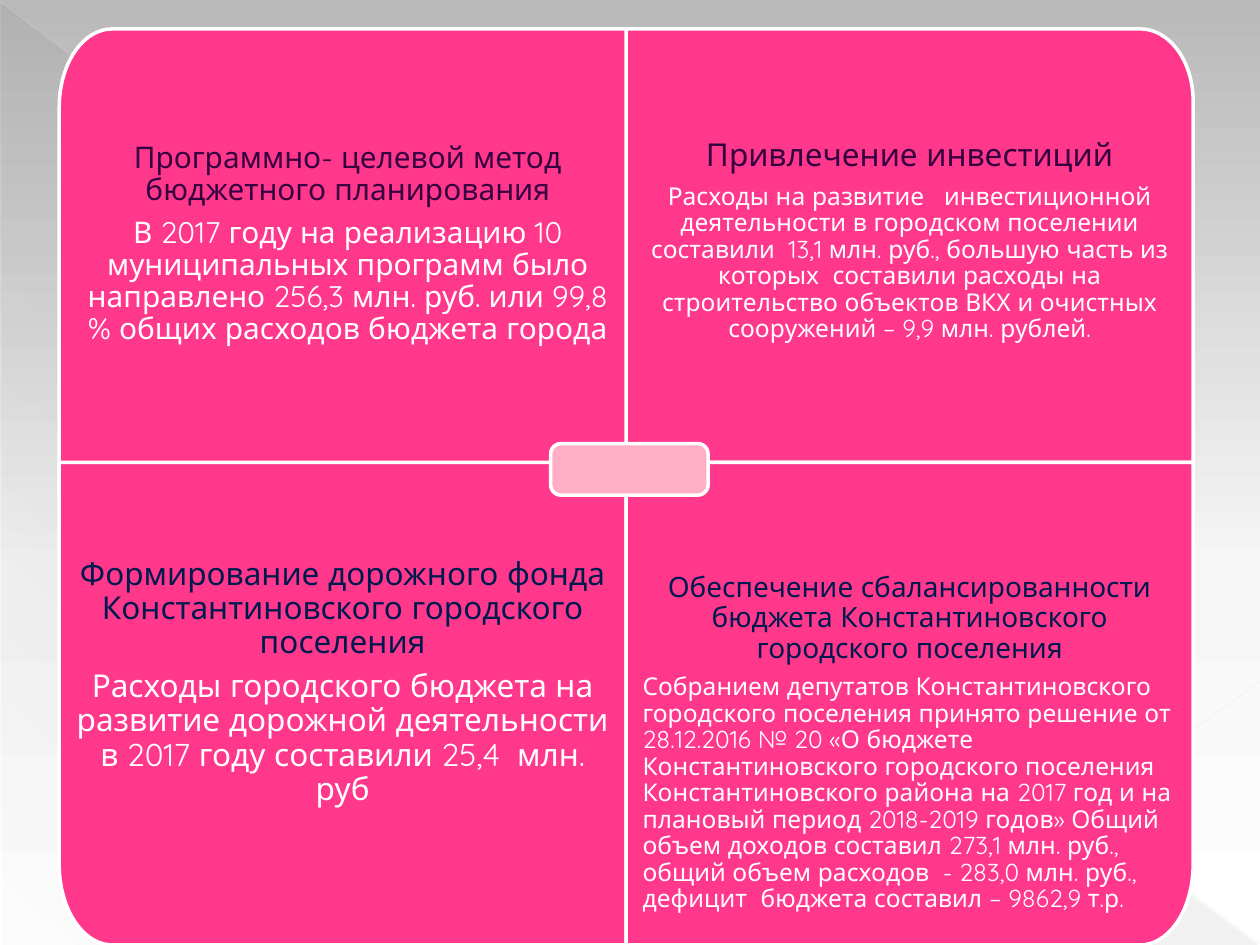
from math import cos, pi, sin

from lxml import etree
from pptx import Presentation
from pptx.dml.color import RGBColor
from pptx.enum.shapes import MSO_CONNECTOR, MSO_SHAPE
from pptx.enum.text import MSO_ANCHOR, PP_ALIGN
from pptx.oxml import parse_xml
from pptx.oxml.ns import nsdecls, qn
from pptx.util import Inches, Pt

CENTER, LEFT = PP_ALIGN.CENTER, PP_ALIGN.LEFT
TOP, MIDDLE = MSO_ANCHOR.TOP, MSO_ANCHOR.MIDDLE

# Theme
THEME = dict(font="Quicksand", panel="FF388C", badge="FFAFC5", white="FFFFFF",
             plum="340040", navy="001A4F", border=2, spacing=0.9, after=6)
BACKGROUND = [(0, "B9B9B9", 100), (60, "F6F6F6", 100), (100, "FFFFFF", 100)]
SHADE = [(0, "666666", 10), (70, "666666", 8), (100, "666666", 1)]
DECOR_LINES = [  # start, end, colour, width, opacity
    ((0, 0.01), (9.99, 7.49), "E8E8E8", 0.39, 35),
    ((10, 5.41), (7.07, 7.49), "EAEAEA", 0.47, 45),
]

# Content: outer and inner corner, top and bottom inset, heading and body
LEFT_X, MID_X, RIGHT_X = 0.47, 4.97, 9.47
TOP_Y, MID_Y, BOTTOM_Y = 0.23, 3.67, 7.5
RADIUS_X, RADIUS_SHARE = 0.42, 1 / 6
PANELS = [
    dict(outer=(LEFT_X, TOP_Y), inner=(5.05, 3.94), insets=(0.47, 0.76),
         anchor=MIDDLE, color="plum", sizes=(17, 17), align=CENTER,
         head="Программно- целевой метод бюджетного планирования",
         body="В 2017 году на реализацию 10 муниципальных программ было "
              "направлено 256,3 млн. руб. или 99,8 % общих расходов бюджета города"),
    dict(outer=(RIGHT_X, TOP_Y), inner=(MID_X, MID_Y), insets=(0.69, 0.76),
         anchor=MIDDLE, color="plum", sizes=(18, 14), align=CENTER,
         head="Привлечение инвестиций",
         body="Расходы на развитие   инвестиционной деятельности в городском "
              "поселении составили  13,1 млн. руб., большую часть из которых  "
              "составили расходы на строительство объектов ВКХ и очистных "
              "сооружений – 9,9 млн. рублей."),
    dict(outer=(LEFT_X, BOTTOM_Y), inner=(MID_X, MID_Y), insets=(0.76, 0.13),
         anchor=TOP, color="navy", sizes=(18, 18), align=CENTER,
         head="Формирование дорожного фонда Константиновского городского поселения",
         body="Расходы городского бюджета на развитие дорожной деятельности "
              "в 2017 году составили 25,4  млн. руб"),
    dict(outer=(RIGHT_X, BOTTOM_Y), inner=(MID_X, MID_Y), insets=(0.76, 0.13),
         anchor=MIDDLE, color="navy", sizes=(16, 14), align=LEFT,
         head="Обеспечение сбалансированности бюджета Константиновского "
              "городского поселения",
         body="Собранием депутатов Константиновского городского поселения принято "
              "решение от 28.12.2016 № 20 «О бюджете Константиновского городского "
              "поселения Константиновского района на 2017 год и на плановый период "
              "2018-2019 годов» Общий объем доходов составил 273,1 млн. руб., общий "
              "объем расходов  - 283,0 млн. руб., дефицит  бюджета составил – "
              "9862,9 т.р."),
]


def rgb(name):
    return RGBColor.from_string(THEME.get(name, name))


def set_gradient(fill, parent, stops, angle):
    """Replace a two-stop gradient with the given stops."""
    fill.gradient()
    old = parent.find(qn("a:gradFill"))
    gs = "".join(f'<a:gs pos="{pos * 1000}"><a:srgbClr val="{color}">'
                 f'<a:alpha val="{alpha * 1000}"/></a:srgbClr></a:gs>'
                 for pos, color, alpha in stops)
    parent.replace(old, parse_xml(
        f'<a:gradFill {nsdecls("a")} rotWithShape="1"><a:gsLst>{gs}</a:gsLst>'
        f'<a:lin ang="{angle * 60000}" scaled="0"/></a:gradFill>'))


def style(sp, fill):
    sp.shadow.inherit = False
    sp.fill.solid()
    sp.fill.fore_color.rgb = rgb(fill)
    sp.line.color.rgb = rgb("white")
    sp.line.width = Pt(THEME["border"])


def write(p, text, *, size, color, align=CENTER):
    p.alignment = align
    p.line_spacing = THEME["spacing"]
    p.space_after = Pt(THEME["after"])
    r = p.add_run()
    r.text = text
    r.font.name, r.font.size = THEME["font"], Pt(size)
    r.font.color.rgb = rgb(color)


def add_decor_line(s, start, end, color, width, opacity):
    line = s.shapes.add_connector(MSO_CONNECTOR.STRAIGHT,
                                  *map(Inches, start + end))
    line.line.color.rgb = rgb(color)
    line.line.width = Pt(width)
    sp_pr = line._element.spPr
    clr = next(sp_pr.iter(qn("a:srgbClr")))
    etree.SubElement(clr, qn("a:alpha"), val=str(opacity * 1000))
    etree.SubElement(sp_pr, qn("a:effectLst"))


def add_panel(s, panel, steps=24):
    """Draw a quadrant whose outer corner is an elliptical arc."""
    (ox, oy), (ix, iy) = panel["outer"], panel["inner"]
    rx = RADIUS_X if ix > ox else -RADIUS_X
    ry = (iy - oy) * RADIUS_SHARE
    angles = [i * pi / 2 / steps for i in range(steps + 1)]
    points = [(ox + rx * (1 - cos(t)), oy + ry * (1 - sin(t))) for t in angles]
    points += [(ix, oy), (ix, iy), (ox, iy)]
    points = [(Inches(x), Inches(y)) for x, y in points]
    builder = s.shapes.build_freeform(*points[0], scale=1.0)
    builder.add_line_segments(points[1:], close=True)
    sp = builder.convert_to_shape()
    style(sp, "panel")

    tf = sp.text_frame
    tf.word_wrap = True
    tf.vertical_anchor = panel["anchor"]
    tf.margin_left = tf.margin_right = Inches(0.13)
    tf.margin_top, tf.margin_bottom = map(Inches, panel["insets"])
    head_size, body_size = panel["sizes"]
    write(tf.paragraphs[0], panel["head"], size=head_size, color=panel["color"])
    write(tf.add_paragraph(), panel["body"], size=body_size, color="white",
          align=panel["align"])


def main():
    prs = Presentation()
    prs.slide_width, prs.slide_height = Inches(10), Inches(7.5)
    s = prs.slides.add_slide(prs.slide_layouts[6])

    # Backdrop
    fill = s.background.fill
    fill.solid()
    set_gradient(fill, s._element.cSld.find(qn("p:bg")).find(qn("p:bgPr")),
                 BACKGROUND, 90)
    shade = s.shapes.add_shape(MSO_SHAPE.RIGHT_TRIANGLE,
                               *map(Inches, (0.01, 0.02, 9.98, 7.48)))
    shade.shadow.inherit = False
    shade.line.fill.background()
    set_gradient(shade.fill, shade._element.spPr, SHADE, 133)
    for decor in DECOR_LINES:
        add_decor_line(s, *decor)

    # Four quadrants
    for panel in PANELS:
        add_panel(s, panel)

    # Badge where the quadrants meet
    badge = s.shapes.add_shape(MSO_SHAPE.ROUNDED_RECTANGLE,
                               *map(Inches, (4.37, 3.52, 1.25, 0.41)))
    badge.adjustments[0] = 0.2
    style(badge, "badge")

    prs.save("out.pptx")


if __name__ == "__main__":
    main()
